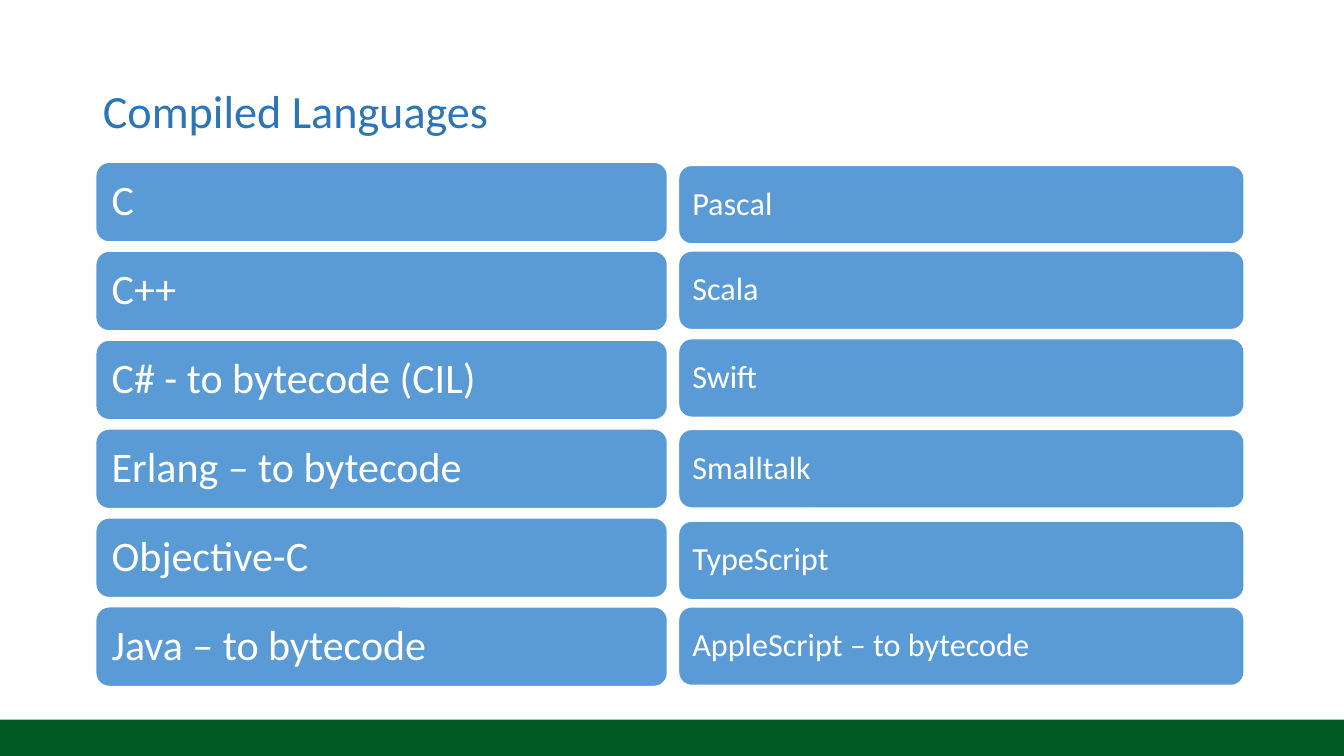
from pptx import Presentation
from pptx.dml.color import RGBColor
from pptx.enum import shapes, text
from pptx.util import Inches, Pt

WHITE = RGBColor(0xFF, 0xFF, 0xFF)
BLUE = RGBColor(0x5B, 0x9B, 0xD5)
TITLE_BLUE = RGBColor(0x2E, 0x75, 0xB6)
GREEN = RGBColor(0x01, 0x5A, 0x22)
FONT = "Calibri"

LEFT_LANGUAGES = ["C", "C++", "C# - to bytecode (CIL)", "Erlang – to bytecode",
                  "Objective-C", "Java – to bytecode"]
RIGHT_LANGUAGES = ["Pascal", "Scala", "Swift", "Smalltalk", "TypeScript",
                   "AppleScript – to bytecode"]
LEFT_TOPS = [1.61 + 0.882 * i for i in range(len(LEFT_LANGUAGES))]
RIGHT_TOPS = [1.64, 2.49, 3.36, 4.26, 5.17, 6.02]  # spaced by hand


def style_text(p, size, color):
    p.line_spacing = 0.9
    p.font.name = FONT
    p.font.size = Pt(size)
    p.font.color.rgb = color


def add_footer_bar(s, left, top, width, height):
    sp = s.shapes.add_shape(shapes.MSO_SHAPE.RECTANGLE, Inches(left), Inches(top),
                            Inches(width), Inches(height))
    sp.shadow.inherit = False
    sp.fill.solid()
    sp.fill.fore_color.rgb = GREEN
    sp.line.fill.background()


def add_title(s, title, left, top, width, height):
    sp = s.shapes.title
    sp.left, sp.top = Inches(left), Inches(top)
    sp.width, sp.height = Inches(width), Inches(height)
    tf = sp.text_frame
    tf.text = title
    tf.vertical_anchor = text.MSO_ANCHOR.MIDDLE
    p = tf.paragraphs[0]
    p.alignment = text.PP_ALIGN.LEFT
    style_text(p, 33, TITLE_BLUE)


def add_language_column(s, languages, tops, left, width, height, size, inset):
    """Stack one rounded bar per language in a group."""
    group = s.shapes.add_group_shape()
    for language, top in zip(languages, tops):
        sp = group.shapes.add_shape(shapes.MSO_SHAPE.ROUNDED_RECTANGLE, Inches(left),
                                    Inches(top), Inches(width), Inches(height))
        sp.shadow.inherit = False
        sp.fill.solid()
        sp.fill.fore_color.rgb = BLUE
        sp.line.color.rgb = WHITE
        sp.line.width = Pt(1)
        tf = sp.text_frame
        tf.text = language
        tf.word_wrap = True
        tf.vertical_anchor = text.MSO_ANCHOR.MIDDLE
        tf.margin_left = tf.margin_right = Inches(inset)
        tf.margin_top = tf.margin_bottom = Inches(inset)
        p = tf.paragraphs[0]
        p.alignment = text.PP_ALIGN.LEFT
        style_text(p, size, WHITE)


def main():
    prs = Presentation()
    prs.slide_width, prs.slide_height = Inches(13.33), Inches(7.5)
    s = prs.slides.add_slide(prs.slide_layouts[5])  # title only

    # Footer and title
    add_footer_bar(s, 0, 7.14, 13.33, 0.36)
    add_title(s, "Compiled Languages", 0.92, 0.4, 11.45, 1.45)

    # Two columns of languages
    add_language_column(s, LEFT_LANGUAGES, LEFT_TOPS, 0.95, 5.67, 0.79, 30, 0.12)
    add_language_column(s, RIGHT_LANGUAGES, RIGHT_TOPS, 6.73, 5.61, 0.78, 23, 0.1)

    prs.save("out.pptx")


if __name__ == "__main__":
    main()
